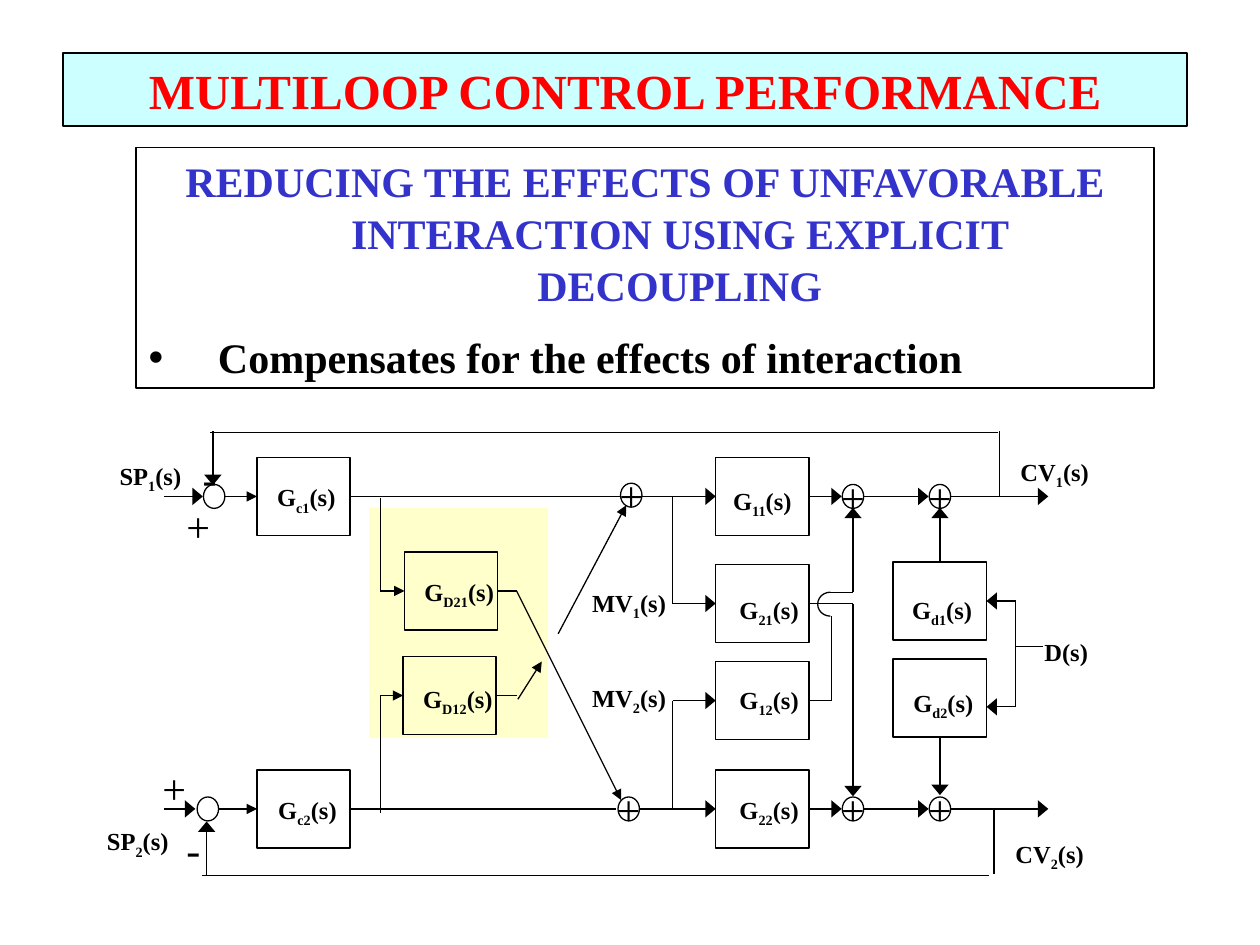
import math
import pptx
import pptx.dml.color
import pptx.enum.shapes
import pptx.enum.text
import pptx.oxml.ns
import pptx.util
from lxml import etree

COLORS = {"ink": "000000", "title": "FF0000", "banner": "CCFFFF",
          "heading": "3333CC", "decoupler": "FFFFCC"}
FONT = "Times New Roman"
COLUMNS, ROWS = 100, 75
BLOCK_WIDTH, BLOCK_HEIGHT = 7.4, 6.2
SUM_WIDTH, SUM_HEIGHT = 1.7, 1.9
LOOP_1, LOOP_2 = 9.4, 34.2            # signal rows of the two loops
TOP, LEFT, BOTTOM, RIGHT = range(4)   # connection sites of a block
SHAPES = pptx.enum.shapes.MSO_SHAPE
ANCHOR = pptx.enum.text.MSO_ANCHOR
ALIGN = pptx.enum.text.PP_ALIGN

# name: centre column, centre row, label, label column, label row, label width
BLOCKS = {
    "c1": (24.1, LOOP_1, "G_c1_(s)", 21.0, 7.8, 6.8),
    "c2": (24.1, LOOP_2, "G_c2_(s)", 21.1, 32.6, 6.8),
    "11": (60.5, LOOP_1, "G_11_(s)", 57.2, 8.1, 6.8),
    "21": (60.5, 17.9, "G_21_(s)", 57.7, 16.7, 6.8),
    "12": (60.5, 25.6, "G_12_(s)", 57.7, 23.9, 6.8),
    "22": (60.5, LOOP_2, "G_22_(s)", 57.7, 32.6, 6.8),
    "d1": (74.6, 17.7, "G_d1_(s)", 71.4, 16.7, 6.9),
    "d2": (74.6, 25.4, "G_d2_(s)", 71.5, 24.1, 6.9),
    "D21": (35.8, 16.9, "G_D21_(s)", 32.7, 15.3, 7.7),
    "D12": (35.7, 25.2, "G_D12_(s)", 32.6, 23.8, 7.7),
}
# centre column, centre row, sign inside
SUMS = [(17.0, LOOP_1, ""), (16.5, LOOP_2, ""),
        (50.1, 9.3, "+"), (49.9, LOOP_2, "+"),
        (67.7, LOOP_1, "+"), (74.6, LOOP_1, "+"),
        (67.7, LOOP_2, "+"), (74.6, LOOP_2, "+")]
# text, column, row, width
SIGNALS = [("SP_1_(s)", 8.5, 6.1, 6.9), ("SP_2_(s)", 7.5, 35.1, 6.9),
           ("MV_1_(s)", 46.0, 16.2, 7.9), ("MV_2_(s)", 46.0, 23.7, 7.9),
           ("CV_1_(s)", 80.0, 5.8, 7.5), ("CV_2_(s)", 79.6, 36.1, 7.5),
           ("D(s)", 81.9, 20.1, 5.5)]
SIGNS = [("-", 15.1, 5.4, 3.1), ("+", 13.8, 9.2, 3.9),
         ("-", 13.8, 34.9, 3.1), ("+", 11.9, 30.0, 3.9)]
# wires by arrowhead width; an end is a grid point or a block and its side
WIRES = {
    None: [
        (("c1", RIGHT), (49.2, LOOP_1)), (("c2", RIGHT), (48.9, LOOP_2)),
        ((30.2, 9.5), (30.2, 16.9)), ((30.2, 34.5), (30.2, 25.2)),
        (("D21", RIGHT), (41.0, 16.9)), (("D12", RIGHT), (41.0, 25.2)),
        ((53.4, LOOP_1), (53.4, 17.9)), ((53.4, 25.6), (53.4, LOOP_2)),
        (("21", RIGHT), (67.7, 17.9)), (("12", RIGHT), (66.0, 25.6)),
        ((66.0, 25.6), (66.0, 18.9)), ((65.9, 17.0), (67.7, 17.0)),
        ((80.6, 17.7), (80.6, 26.1)), ((80.6, 21.3), (82.8, 21.3)),
        ((79.3, LOOP_1), (79.3, 4.2)), ((79.2, 4.3), (16.7, 4.3)),
        ((78.9, LOOP_2), (78.9, 39.4)), ((78.5, 39.5), (16.0, 39.5)),
    ],
    "lg": [
        ((13.0, LOOP_1), (16.1, LOOP_1)), ((13.0, LOOP_2), (15.5, LOOP_2)),
        ((16.9, 4.2), (16.9, 8.5)), ((16.4, 39.5), (16.4, 35.2)),
        ((50.8, LOOP_1), ("11", LEFT)), ((50.8, LOOP_2), ("22", LEFT)),
        ((53.4, 17.9), ("21", LEFT)), ((53.4, 25.6), ("12", LEFT)),
        (("11", RIGHT), (66.8, LOOP_1)), (("22", RIGHT), (66.8, LOOP_2)),
        ((68.5, LOOP_1), (73.7, LOOP_1)), ((68.5, LOOP_2), (73.7, LOOP_2)),
        ((75.5, LOOP_1), (83.2, LOOP_1)), ((75.5, LOOP_2), (83.2, LOOP_2)),
        ((67.7, 17.0), (67.7, 10.3)), ((67.7, 17.9), (67.7, 33.2)),
        (("d1", TOP), (74.6, 10.3)), (("d2", BOTTOM), (74.6, 33.1)),
        ((80.6, 17.7), ("d1", RIGHT)), ((80.6, 26.1), (78.3, 26.1)),
    ],
    "med": [
        ((17.8, LOOP_1), ("c1", LEFT)), ((17.4, LOOP_2), ("c2", LEFT)),
        ((30.2, 16.9), ("D21", LEFT)), ((30.2, 25.2), ("D12", LEFT)),
        ((41.0, 16.9), (49.3, 33.5)), ((41.1, 25.5), (43.0, 22.5)),
        ((44.3, 20.3), (49.7, 10.1)),
    ],
}


class Grid:
    """Turns columns and rows inside a box into slide lengths."""

    def __init__(self, deck, column, row):
        self.unit_x = deck.slide_width / COLUMNS
        self.unit_y = deck.slide_height / ROWS
        self.column, self.row = column, row

    def point(self, x, y):
        return (round((self.column + x) * self.unit_x),
                round((self.row + y) * self.unit_y))

    def frame(self, x, y, width, height):
        return (*self.point(x, y), round(width * self.unit_x), round(height * self.unit_y))


def color(name):
    return pptx.dml.color.RGBColor.from_string(COLORS[name])


def set_all(target, values):
    for name, value in values.items():
        setattr(target, name, value)


def paint(shape, fill=None, line="ink", weight=0.75):
    shape.shadow.inherit = False
    if fill:
        shape.fill.solid()
        shape.fill.fore_color.rgb = color(fill)
    else:
        shape.fill.background()
    if line:
        shape.line.color.rgb = color(line)
        shape.line.width = pptx.util.Pt(weight)
    else:
        shape.line.fill.background()


def write(para, text, size, bold=True, ink="ink"):
    """Add text; the part between underscores is a subscript."""
    for index, part in enumerate(text.split("_")):
        span = para.add_run()
        span.text = part
        set_all(span.font, {"name": FONT, "size": pptx.util.Pt(size), "bold": bold})
        span.font.color.rgb = color(ink)
        if index % 2:
            span.font._element.set("baseline", "-25000")


def add_label(page, grid, text, column, row, width, height=3.3, size=14, bold=True):
    box = page.shapes.add_textbox(*grid.frame(column, row, width, height))
    box.text_frame.word_wrap = False
    write(box.text_frame.paragraphs[0], text, size, bold)


def add_wire(page, grid, blocks, ends, head):
    points = [(0, 0) if isinstance(end[0], str) else grid.point(*end) for end in ends]
    wire = page.shapes.add_connector(
        pptx.enum.shapes.MSO_CONNECTOR.STRAIGHT, *points[0], *points[1])
    for end, join in zip(ends, (wire.begin_connect, wire.end_connect)):
        if isinstance(end[0], str):
            join(blocks[end[0]], end[1])
    wire.line.color.rgb = color("ink")
    wire.line.width = pptx.util.Pt(0.75)
    properties = wire._element.spPr
    if head:
        line = properties.find(pptx.oxml.ns.qn("a:ln"))
        etree.SubElement(line, pptx.oxml.ns.qn("a:tailEnd"), type="triangle", w=head, len="med")
    etree.SubElement(properties, pptx.oxml.ns.qn("a:effectLst"))


def place(shape, frame):
    set_all(shape, dict(zip(("left", "top", "width", "height"), frame)))


def add_title(page, grid):
    title = page.shapes.title
    place(title, grid.frame(0, 0, 89.2, 5.8))
    paint(title, "banner")
    set_all(title.text_frame, {"word_wrap": True, "vertical_anchor": ANCHOR.MIDDLE,
                               "auto_size": pptx.enum.text.MSO_AUTO_SIZE.NONE})
    para = title.text_frame.paragraphs[0]
    para.alignment = ALIGN.CENTER
    write(para, "MULTILOOP CONTROL PERFORMANCE", 28, ink="title")


def add_body(page, grid):
    body = page.placeholders[1]
    place(body, grid.frame(0, 0, 80.8, 19.1))
    paint(body)
    frame = body.text_frame
    set_all(frame, {"word_wrap": True, "vertical_anchor": ANCHOR.TOP,
                    "auto_size": pptx.enum.text.MSO_AUTO_SIZE.NONE})
    lines = [("REDUCING THE EFFECTS OF UNFAVORABLE INTERACTION USING EXPLICIT DECOUPLING",
              "heading", ALIGN.CENTER, None),
             ("Compensates for the effects of interaction", "ink", ALIGN.LEFT, "•")]
    for index, (text, ink, align, bullet) in enumerate(lines):
        para = frame.add_paragraph() if index else frame.paragraphs[0]
        set_all(para, {"alignment": align, "line_spacing": 1.03,
                       "space_before": pptx.util.Pt(12)})
        properties = para._p.get_or_add_pPr()
        indent = pptx.util.Inches(0.55)
        properties.set("marL", str(indent))
        properties.set("indent", str(-indent))
        mark = etree.SubElement(properties,
                                pptx.oxml.ns.qn("a:buChar" if bullet else "a:buNone"))
        if bullet:
            mark.set("char", bullet)
        write(para, text, 24, ink=ink)


def add_diagram(page, grid):
    # decoupler area
    area = page.shapes.add_shape(SHAPES.RECTANGLE, *grid.frame(29.3, 10.3, 14.2, 18.3))
    paint(area, "decoupler", None)
    # transfer function blocks
    blocks = {}
    for name, (column, row, *label) in BLOCKS.items():
        blocks[name] = page.shapes.add_shape(SHAPES.RECTANGLE, *grid.frame(
            column - BLOCK_WIDTH / 2, row - BLOCK_HEIGHT / 2, BLOCK_WIDTH, BLOCK_HEIGHT))
        paint(blocks[name], weight=1)
        add_label(page, grid, *label)
    # summing junctions
    for column, row, sign in SUMS:
        junction = page.shapes.add_shape(SHAPES.OVAL, *grid.frame(
            column - SUM_WIDTH / 2, row - SUM_HEIGHT / 2, SUM_WIDTH, SUM_HEIGHT))
        paint(junction)
        if sign:
            set_all(junction.text_frame, {"word_wrap": False, "vertical_anchor": ANCHOR.MIDDLE})
            para = junction.text_frame.paragraphs[0]
            para.alignment = ALIGN.CENTER
            write(para, sign, 24, bold=False)
    # wires
    for head, wires in WIRES.items():
        for ends in wires:
            add_wire(page, grid, blocks, ends, head)
    # hop where two wires cross
    angles = [math.radians(90 + 15 * step) for step in range(13)]
    hop = [grid.point(65.9 + math.cos(angle), 17.95 + 0.95 * math.sin(angle))
           for angle in angles]
    builder = page.shapes.build_freeform(*hop[0])
    builder.add_line_segments(hop[1:], close=False)
    paint(builder.convert_to_shape())
    # signal names and signs
    for signal in SIGNALS:
        add_label(page, grid, *signal)
    for sign in SIGNS:
        add_label(page, grid, *sign, height=5, size=24, bold=False)


def main():
    deck = pptx.Presentation()
    set_all(deck, {"slide_width": pptx.util.Inches(10), "slide_height": pptx.util.Inches(7.5)})
    page = deck.slides.add_slide(deck.slide_layouts[1])
    add_title(page, Grid(deck, 5, 4.2))
    add_body(page, Grid(deck, 10.8, 11.7))
    add_diagram(page, Grid(deck, 0, 30))
    deck.save("out.pptx")


if __name__ == "__main__":
    main()
